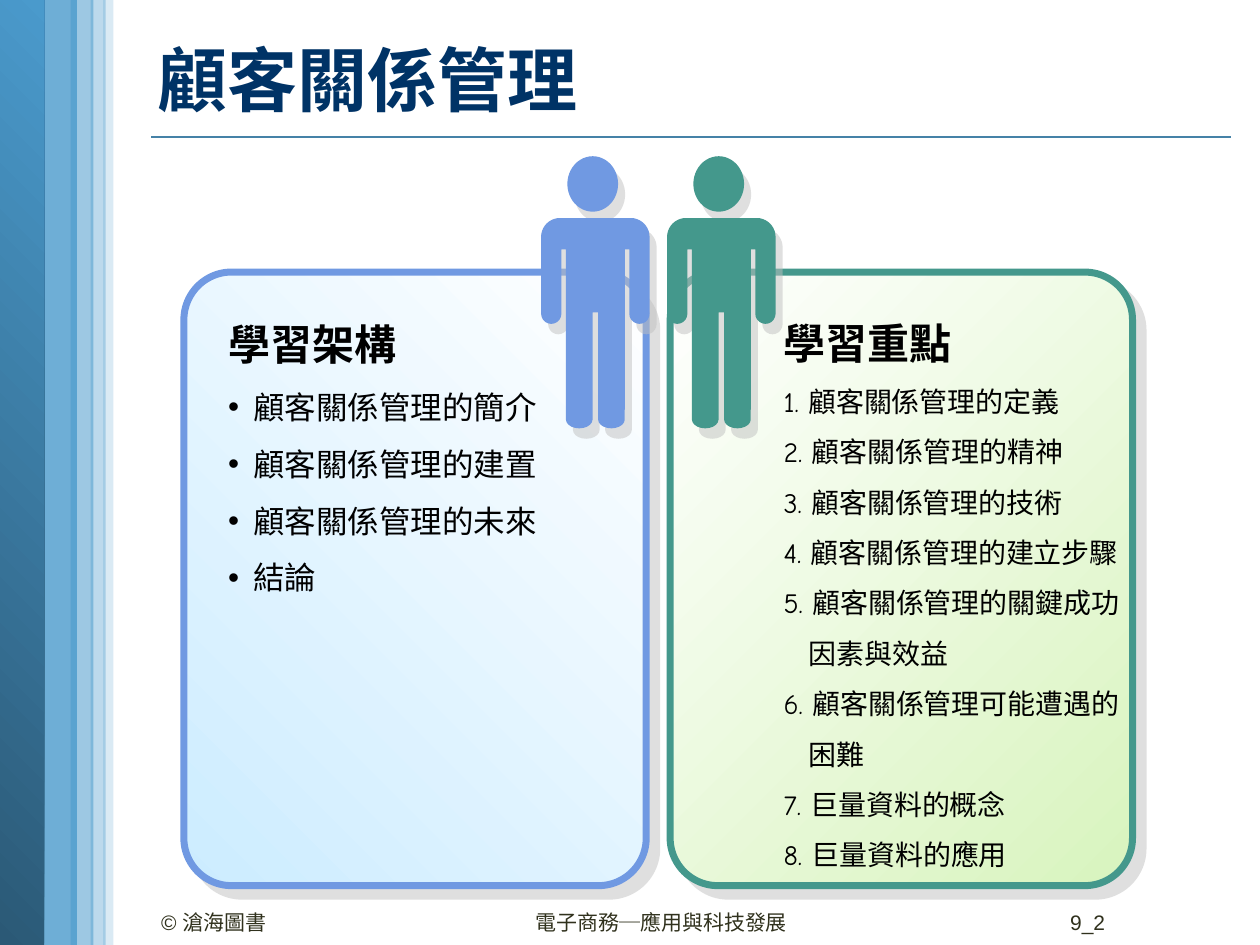
import math
from dataclasses import dataclass

import pptx
import pptx.dml.color
import pptx.enum.shapes
import pptx.enum.text
import pptx.oxml.ns
import pptx.util
from lxml import etree

Pt = pptx.util.Pt
qn = pptx.oxml.ns.qn
SHAPES = pptx.enum.shapes.MSO_SHAPE
ALIGN = pptx.enum.text.PP_ALIGN


@dataclass(frozen=True)
class Theme:
    display: str = "Comic Neue"
    plain: str = "Arial"
    title_size: int = 40
    heading_size: int = 24
    topic_size: int = 18
    goal_size: int = 16
    footer_size: int = 12
    title: str = "003366"
    text: str = "000000"
    footer: str = "30311D"
    rule: str = "4582A7"
    stripe: str = "4A9ACC"
    stripe_dark: str = "2B5976"
    blue: str = "7099E2"
    blue_pale: str = "CCECFF"
    green: str = "44988C"
    green_pale: str = "D8F4BE"
    white: str = "FFFFFF"
    shadow: str = "C0C0C0"


THEME = Theme()


def rgb(code):
    return pptx.dml.color.RGBColor.from_string(code)


def place(box, left, top, width, height):
    box.left, box.top, box.width, box.height = map(Pt, (left, top, width, height))


def fill_solid(shape, color, opacity=100):
    shape.fill.solid()
    shape.fill.fore_color.rgb = rgb(color)
    if opacity < 100:
        code = shape.fill._xPr.find(".//" + qn("a:srgbClr"))
        etree.SubElement(code, qn("a:alpha"), val=str(opacity * 1000))


def fill_gradient(shape, first, last, angle):
    shape.fill.gradient()
    shape.fill.gradient_angle = angle
    for stop, color in zip(shape.fill.gradient_stops, (first, last)):
        stop.color.rgb = rgb(color)


def cast_shadow(shape, distance, direction):
    shape.shadow.inherit = False
    effects = shape._element.spPr.find(qn("a:effectLst"))
    outer = etree.SubElement(effects, qn("a:outerShdw"), blurRad="0",
                             dist=str(Pt(distance)), dir=str(direction * 60000),
                             algn="ctr", rotWithShape="0")
    color = etree.SubElement(outer, qn("a:srgbClr"), val=THEME.shadow)
    etree.SubElement(color, qn("a:alpha"), val="50000")


def add_span(para, text, font, size, color, bold=False):
    span = para.add_run()
    span.text = text
    span.font.name = font
    span.font.size = Pt(size)
    span.font.bold = bold
    span.font.color.rgb = rgb(color)


def add_stripe(page, left, width):
    stripe = page.shapes.add_shape(SHAPES.RECTANGLE, Pt(left), 0, Pt(width), Pt(540))
    stripe.line.fill.background()
    stripe.shadow.inherit = False
    return stripe


def add_sidebar(page):
    fill_solid(add_stripe(page, 21.6, 22.3), THEME.stripe, 80)
    fill_gradient(add_stripe(page, 0, 25.2), THEME.stripe_dark, THEME.stripe, 45)
    for left, width, opacity in ((59, 5.8, 20), (40.3, 13, 54), (51.8, 8.6, 37)):
        fill_solid(add_stripe(page, left, width), THEME.stripe, opacity)


def add_rule(page):
    rule = page.shapes.add_connector(pptx.enum.shapes.MSO_CONNECTOR.STRAIGHT,
                                     Pt(86.4), Pt(78.5), Pt(703.5), Pt(78.5))
    rule.line.color.rgb = rgb(THEME.rule)
    rule.line.width = Pt(1)
    etree.SubElement(rule._element.spPr, qn("a:effectLst"))


def add_panel(page, left, color, first, last, angle):
    panel = page.shapes.add_shape(SHAPES.ROUNDED_RECTANGLE, Pt(left), Pt(155.5),
                                  Pt(264.2), Pt(350.6))
    panel.adjustments[0] = 0.103
    fill_gradient(panel, first, last, angle)
    panel.line.color.rgb = rgb(color)
    panel.line.width = Pt(4)
    cast_shadow(panel, 8.5, 45)


def arc(x, y, radius_x, radius_y, start, end, steps=10):
    angles = (math.radians(start + (end - start) * i / steps) for i in range(steps + 1))
    return [(x + radius_x * math.cos(a), y + radius_y * math.sin(a)) for a in angles]


def add_person(page, centre, color):
    # The right half runs from shoulder to crotch; the left half mirrors it
    half = (arc(20.2, 10.8, 10.8, 10.8, -90, 0)        # shoulder
            + arc(25.2, 54.7, 5.8, 5.8, 0, 180)        # hand
            + [(19.4, 18), (16.9, 18)]                 # armpit
            + arc(9.2, 115.2, 7.6, 5, 0, 180)          # foot
            + [(1.6, 54)])                             # crotch
    outline = half + [(-x, y) for x, y in reversed(half)]
    points = [(Pt(centre + x), Pt(124.6 + y)) for x, y in outline]
    builder = page.shapes.build_freeform(*points[0], scale=1.0)
    builder.add_line_segments(points[1:], close=True)
    head = page.shapes.add_shape(SHAPES.OVAL, Pt(centre - 16), Pt(89.3), Pt(29), Pt(31.7))
    for part in (head, builder.convert_to_shape()):
        fill_solid(part, color)
        part.line.fill.background()
        cast_shadow(part, 7.2, 56)


def set_title(page, text):
    box = page.shapes.title
    place(box, 82.8, 5, 626.4, 80)
    box.text_frame.vertical_anchor = pptx.enum.text.MSO_ANCHOR.MIDDLE
    para = box.text_frame.paragraphs[0]
    para.alignment = ALIGN.LEFT
    add_span(para, text, THEME.display, THEME.title_size, THEME.title, True)


def add_line(para, text, size, bold=False, hanging=0, bullet=None):
    para.line_spacing = 1.5
    para.space_before = Pt(0)
    properties = para._p.get_or_add_pPr()
    properties.set("marL", str(Pt(hanging)))
    properties.set("indent", str(-Pt(hanging)))
    if bullet:
        etree.SubElement(properties, qn("a:buChar"), char=bullet)
    else:
        etree.SubElement(properties, qn("a:buNone"))
    add_span(para, text, THEME.display, size, THEME.text, bold)


def set_list(page, box, area, heading, items, size, bullet=None):
    page.shapes._spTree.append(box._element)  # bring in front of its panel
    place(box, *area)
    frame = box.text_frame
    frame.word_wrap = True
    frame.auto_size = pptx.enum.text.MSO_AUTO_SIZE.SHAPE_TO_FIT_TEXT
    add_line(frame.paragraphs[0], heading, THEME.heading_size, bold=True)
    for item in items:
        add_line(frame.add_paragraph(), item, size, hanging=14.4, bullet=bullet)


def add_footer(page, left, width, text, align=ALIGN.LEFT):
    box = page.shapes.add_textbox(Pt(left), Pt(516.2), Pt(width), Pt(18.7))
    box.text_frame.word_wrap = True
    para = box.text_frame.paragraphs[0]
    para.alignment = align
    add_span(para, text, THEME.plain, THEME.footer_size, THEME.footer)


def main():
    deck = pptx.Presentation()
    deck.slide_width, deck.slide_height = Pt(720), Pt(540)
    page = deck.slides.add_slide(deck.slide_layouts[3])
    topics_box, goals_box = list(page.placeholders)[1:]
    subject = "顧客關係管理"

    # Background and title
    add_rule(page)
    add_sidebar(page)
    set_title(page, subject)

    # Panels with a person on each
    add_panel(page, 105.1, THEME.blue, THEME.blue_pale, THEME.white, 45)
    add_panel(page, 383, THEME.green, THEME.white, THEME.green_pale, 315)
    add_person(page, 340.2, THEME.blue)
    add_person(page, 412.2, THEME.green)

    # Lists
    topics = [subject + part for part in ("的簡介", "的建置", "的未來")] + ["結論"]
    set_list(page, topics_box, (123.1, 164.2, 223.2, 181.4), "學習架構",
             topics, THEME.topic_size, "•")
    goals = [subject + part for part in ("的定義", "的精神", "的技術", "的建立步驟",
                                         "的關鍵成功因素與效益", "可能遭遇的困難")]
    goals += ["巨量資料的概念", "巨量資料的應用"]
    numbered = [f"{number}. {goal}" for number, goal in enumerate(goals, 1)]
    set_list(page, goals_box, (440.6, 163.4, 211.7, 342), "學習重點",
             numbered, THEME.goal_size)

    # Footer
    add_footer(page, 85, 167.8, "© 滄海圖書")
    add_footer(page, 298.8, 169.9, "電子商務─應用與科技發展")
    add_footer(page, 586.8, 51.8, "9_2", ALIGN.RIGHT)

    deck.save("out.pptx")


if __name__ == "__main__":
    main()
